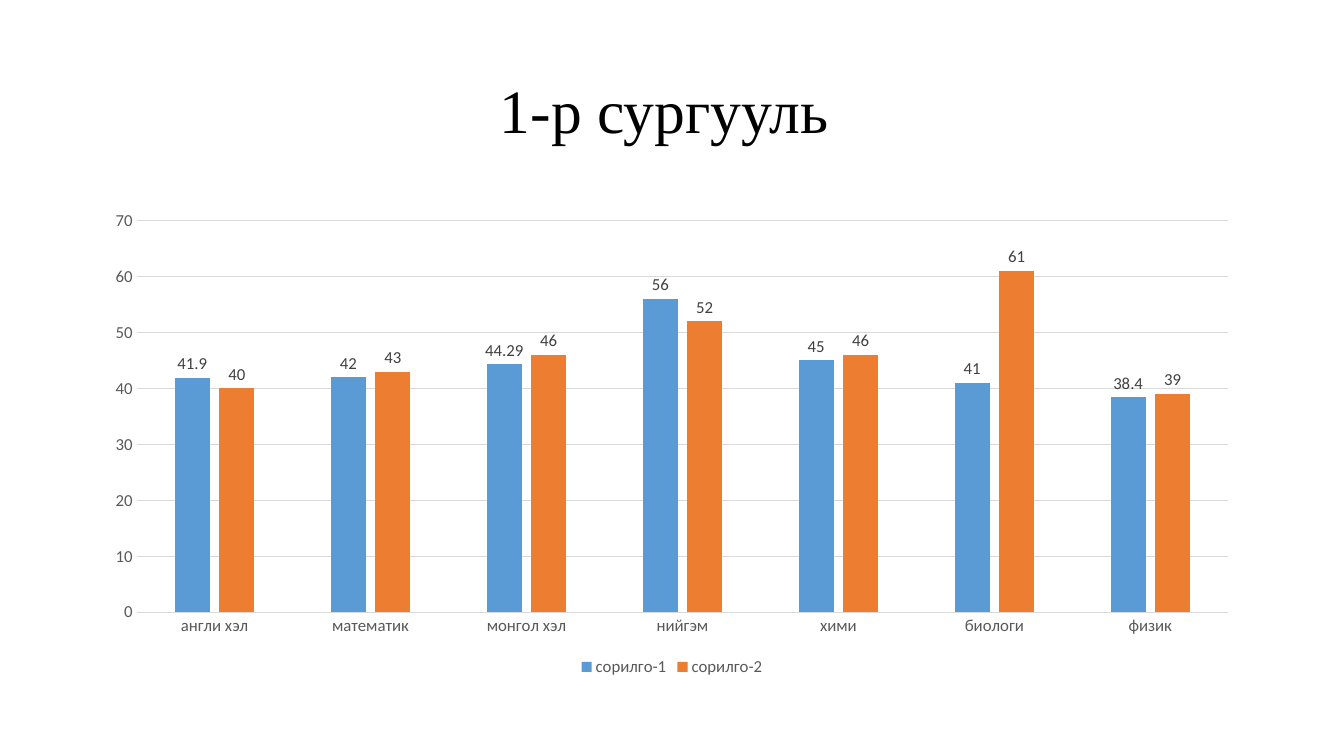
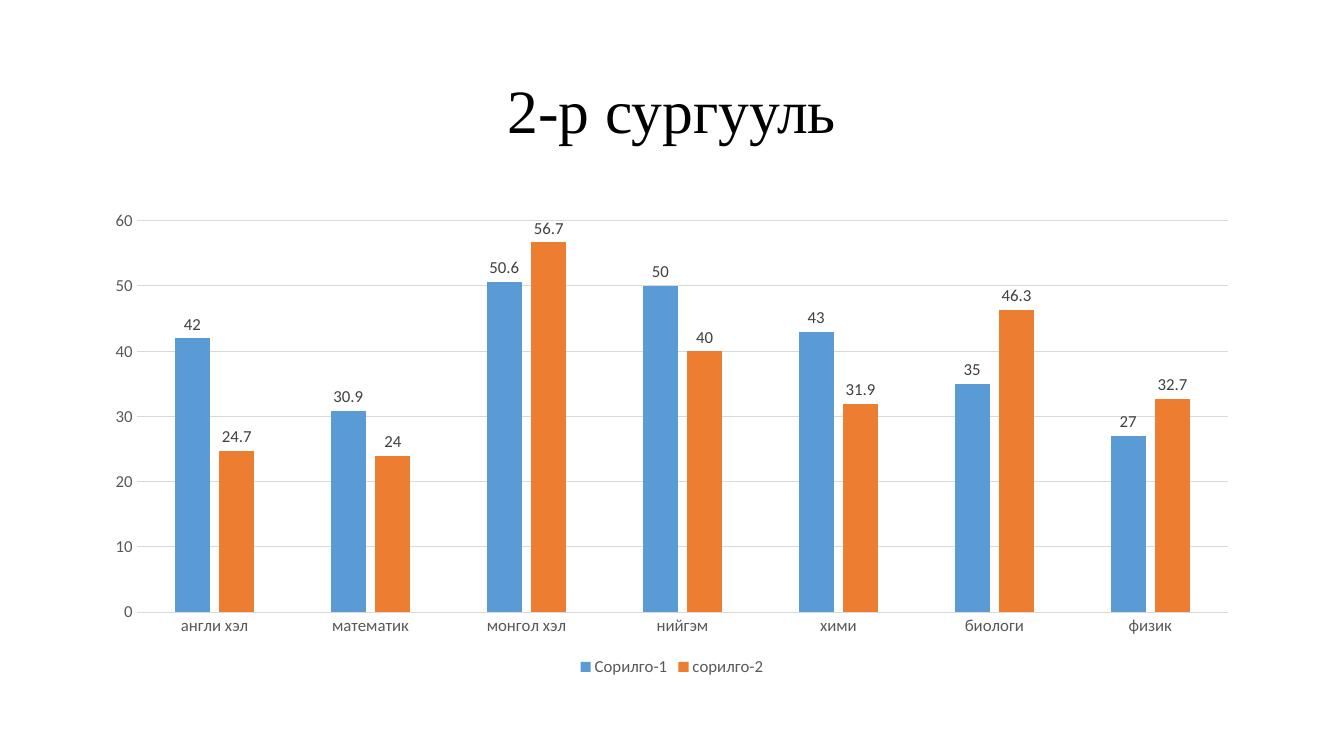
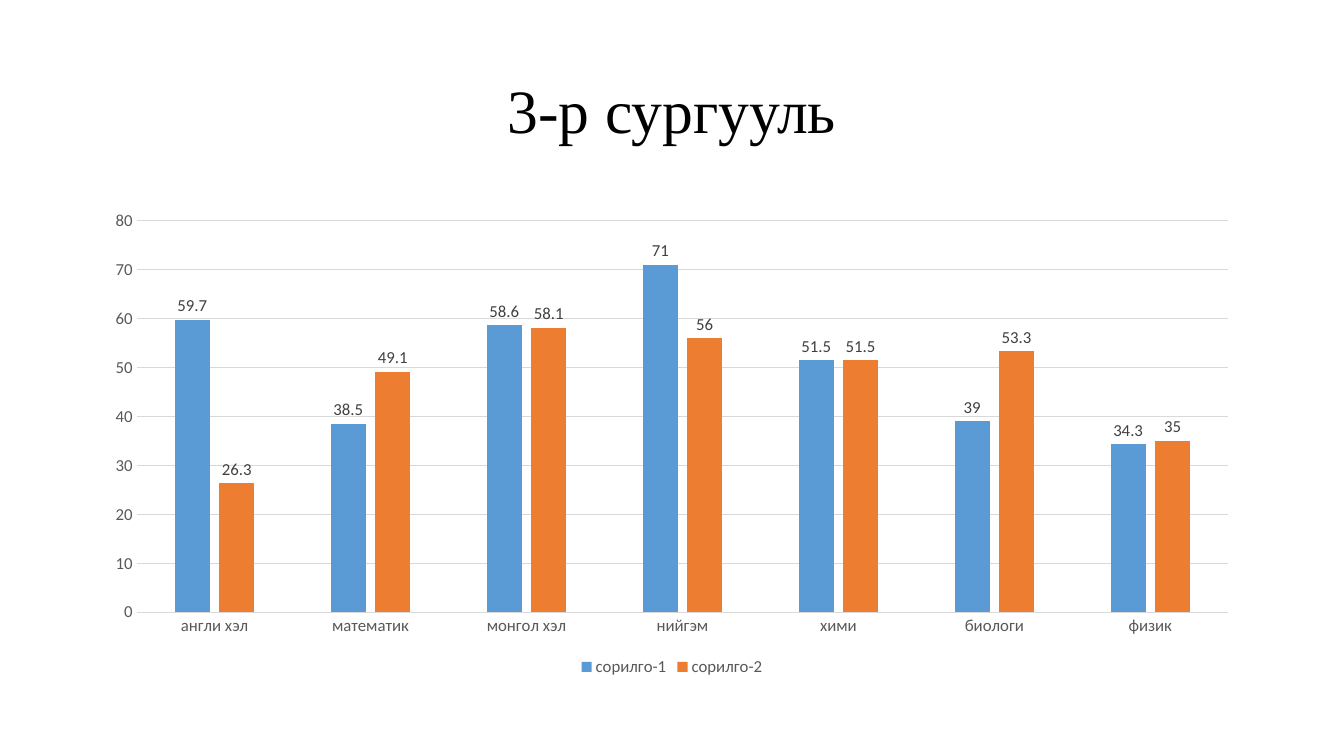
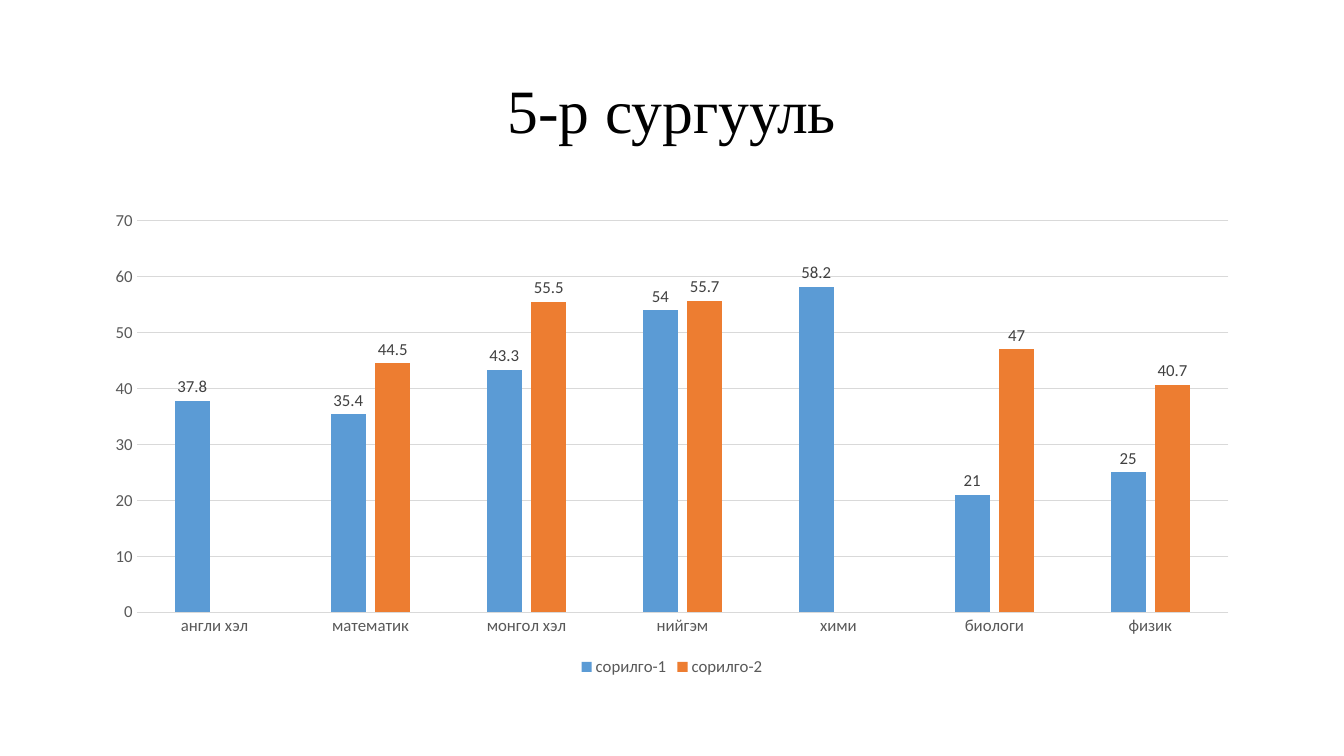
"""Build four slides comparing two test results by subject for each school."""
import dataclasses

import pptx
import pptx.chart.data
import pptx.dml.color
import pptx.enum.chart
import pptx.enum.text
import pptx.util
from pptx.util import Cm

SUBJECTS = ["англи хэл", "математик", "монгол хэл", "нийгэм", "хими", "биологи", "физик"]

SCHOOLS = [
    {
        "title": "1-р сургууль ",
        "maximum": 70,
        "tests": [
            ("сорилго-1", [41.9, 42, 44.29, 56, 45, 41, 38.4]),
            ("сорилго-2", [40, 43, 46, 52, 46, 61, 39]),
        ],
    },
    {
        "title": "2-р сургууль",
        "maximum": 60,
        "tests": [
            ("Сорилго-1", [42, 30.9, 50.6, 50, 43, 35, 27]),
            ("сорилго-2", [24.7, 24, 56.7, 40, 31.9, 46.3, 32.7]),
        ],
    },
    {
        "title": "3-р сургууль",
        "maximum": 80,
        "tests": [
            ("сорилго-1", [59.7, 38.5, 58.6, 71, 51.5, 39, 34.3]),
            ("сорилго-2", [26.3, 49.1, 58.1, 56, 51.5, 53.3, 35]),
        ],
    },
    {
        "title": "5-р сургууль",
        "maximum": 70,
        "tests": [
            ("сорилго-1", [37.8, 35.4, 43.3, 54, 58.2, 21, 25]),
            ("сорилго-2", [None, 44.5, 55.5, 55.7, None, 47, 40.7]),
        ],
    },
]


@dataclasses.dataclass(frozen=True)
class Theme:
    title_font: str = "Times New Roman"
    chart_font: str = "Calibri"
    title_size: int = 44
    chart_size: int = 10
    label_size: int = 12
    line_width: float = 0.75
    black: str = "000000"
    axis_text: str = "595959"
    label_text: str = "404040"
    grid: str = "D9D9D9"
    series: tuple = ("5B9BD5", "ED7D31")


THEME = Theme()
SLIDE_WIDTH, SLIDE_HEIGHT = Cm(33.87), Cm(19.05)
MARGIN = Cm(2.33)
CONTENT_WIDTH = SLIDE_WIDTH - 2 * MARGIN
TITLE_TOP, TITLE_HEIGHT = Cm(1.01), Cm(3.68)
CHART_TOP, CHART_HEIGHT = Cm(5.07), Cm(12.09)


def rgb(value):
    return pptx.dml.color.RGBColor.from_string(value)


def style_font(font, name, size, color):
    font.name = name
    font.size = pptx.util.Pt(size)
    font.color.rgb = rgb(color)


def style_line(line):
    line.color.rgb = rgb(THEME.grid)
    line.width = pptx.util.Pt(THEME.line_width)


def add_title(slide, text):
    title = slide.shapes.title
    title.left, title.top = MARGIN, TITLE_TOP
    title.width, title.height = CONTENT_WIDTH, TITLE_HEIGHT
    frame = title.text_frame
    frame.auto_size = pptx.enum.text.MSO_AUTO_SIZE.NONE
    frame.vertical_anchor = pptx.enum.text.MSO_ANCHOR.MIDDLE
    paragraph = frame.paragraphs[0]
    paragraph.alignment = pptx.enum.text.PP_ALIGN.CENTER
    paragraph.line_spacing = 0.9
    run = paragraph.add_run()
    run.text = text
    style_font(run.font, THEME.title_font, THEME.title_size, THEME.black)


def style_axes(chart, maximum):
    for axis in (chart.category_axis, chart.value_axis):
        axis.major_tick_mark = pptx.enum.chart.XL_TICK_MARK.NONE
        axis.minor_tick_mark = pptx.enum.chart.XL_TICK_MARK.NONE
        style_font(axis.tick_labels.font, THEME.chart_font, THEME.label_size, THEME.axis_text)
    style_line(chart.category_axis.format.line)
    values = chart.value_axis
    values.format.line.fill.background()
    values.minimum_scale, values.maximum_scale = 0, maximum
    values.major_unit = 10
    values.has_major_gridlines = True
    style_line(values.major_gridlines.format.line)


def style_series(plot):
    plot.gap_width, plot.overlap = 219, -27
    plot.vary_by_categories = False
    for series, color in zip(plot.series, THEME.series):
        series.format.fill.solid()
        series.format.fill.fore_color.rgb = rgb(color)
        series.invert_if_negative = False
        labels = series.data_labels
        labels.show_value = True
        labels.position = pptx.enum.chart.XL_LABEL_POSITION.OUTSIDE_END
        style_font(labels.font, THEME.chart_font, THEME.label_size, THEME.label_text)


def add_results_chart(slide, tests, maximum):
    data = pptx.chart.data.CategoryChartData()
    data.categories = SUBJECTS
    for name, values in tests:
        data.add_series(name, values)
    chart = slide.shapes.add_chart(
        pptx.enum.chart.XL_CHART_TYPE.COLUMN_CLUSTERED,
        MARGIN, CHART_TOP, CONTENT_WIDTH, CHART_HEIGHT, data,
    ).chart
    style_font(chart.font, THEME.chart_font, THEME.chart_size, THEME.black)
    chart.has_title = False
    chart.has_legend = True
    chart.legend.position = pptx.enum.chart.XL_LEGEND_POSITION.BOTTOM
    chart.legend.include_in_layout = False
    style_font(chart.legend.font, THEME.chart_font, THEME.label_size, THEME.axis_text)
    style_axes(chart, maximum)
    style_series(chart.plots[0])


def main():
    presentation = pptx.Presentation()
    presentation.slide_width, presentation.slide_height = SLIDE_WIDTH, SLIDE_HEIGHT
    title_only = presentation.slide_layouts.get_by_name("Title Only")
    for school in SCHOOLS:
        slide = presentation.slides.add_slide(title_only)
        add_title(slide, school["title"])
        add_results_chart(slide, school["tests"], school["maximum"])
    presentation.save("out.pptx")


if __name__ == "__main__":
    main()
